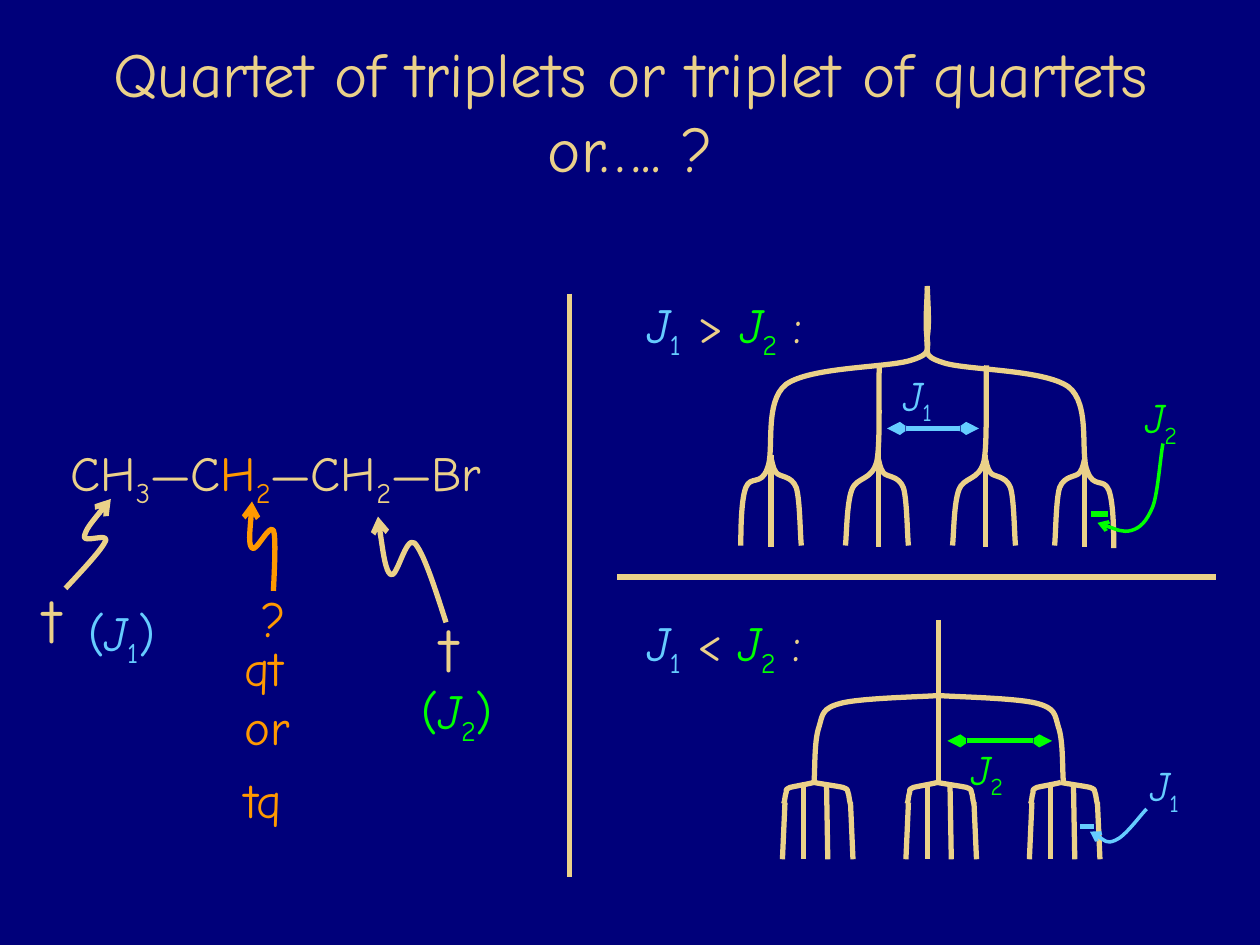
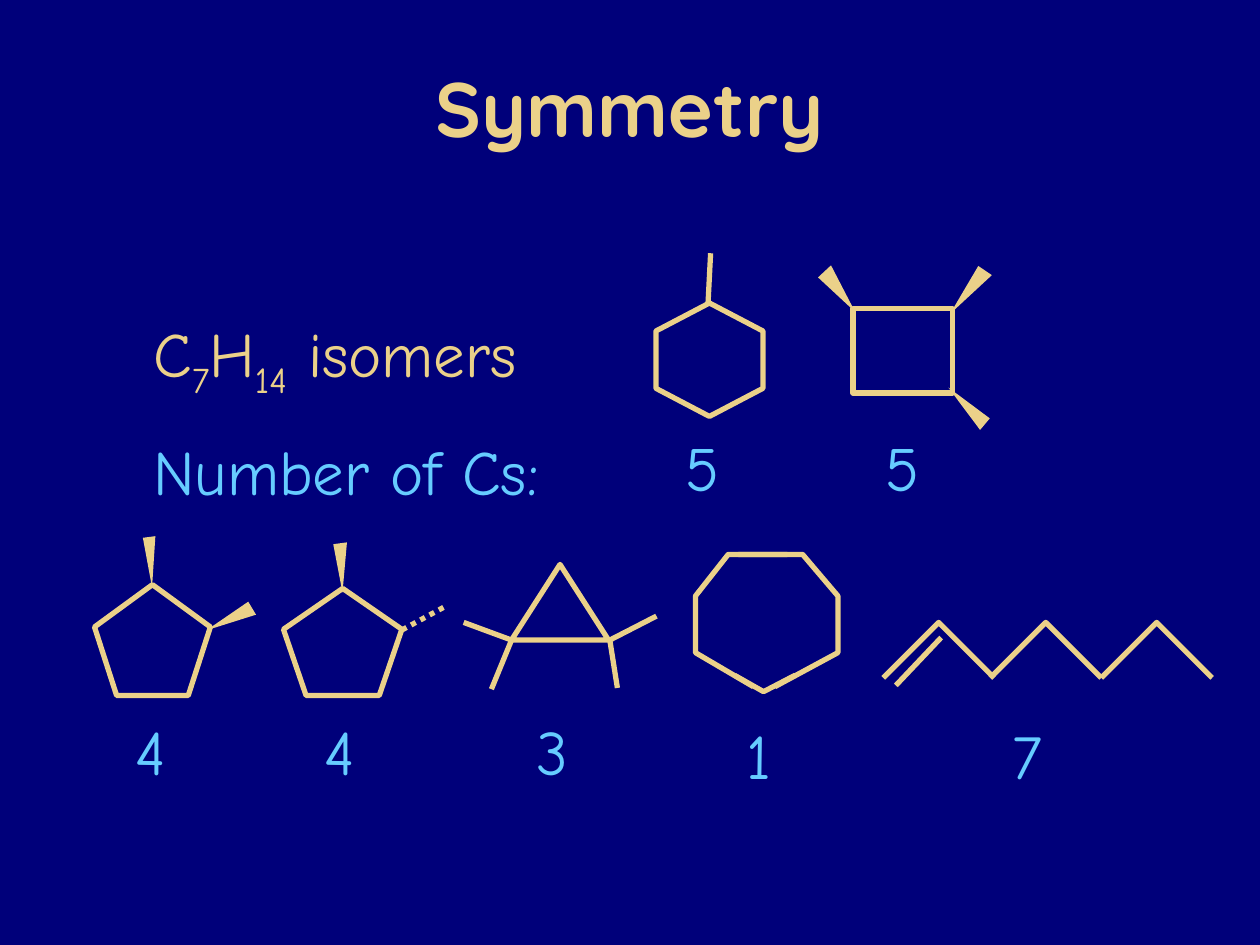
import lxml.etree
import pptx
import pptx.dml.color
import pptx.enum.dml
import pptx.enum.shapes
import pptx.enum.text
import pptx.oxml.ns
import pptx.util

PX = 9144  # EMU per px, 100 px to the inch
NAVY, SAND, ORANGE, SKY, GREEN = "00007A", "EBD189", "FF9900", "66CCFF", "00FF00"
BODY_FONT, HEADING_FONT = "Comic Neue", "Quicksand"
SHAPE = pptx.enum.shapes.MSO_SHAPE
ANCHOR = pptx.enum.text.MSO_ANCHOR
FIT = pptx.enum.text.MSO_AUTO_SIZE
qn = pptx.oxml.ns.qn


def rgb(color):
    return pptx.dml.color.RGBColor.from_string(color)


def emu(*lengths):
    return [v * PX for v in lengths]


def add_element(parent, tag, **attrs):
    return lxml.etree.SubElement(parent, qn(tag), attrs)


# ---- drawing ----

def style_line(sp, color, width=3, head=None, tail=None):
    """Head and tail give the arrow width, such as "med"."""
    sp.line.color.rgb = rgb(color)
    sp.line.width = pptx.util.Pt(width)
    ln = sp.line._get_or_add_ln()
    for tag, size in (("a:headEnd", head), ("a:tailEnd", tail)):
        if size:
            add_element(ln, tag, type="arrow", w=size, len="med")


def line(s, x1, y1, x2, y2, color=SAND, **style):
    c = s.shapes.add_connector(
        pptx.enum.shapes.MSO_CONNECTOR.STRAIGHT, *emu(x1, y1, x2, y2))
    style_line(c, color, **style)
    add_element(c._element.spPr, "a:effectLst")
    return c


def polyline(s, points, color=SAND, **style):
    builder = s.shapes.build_freeform(*points[0], scale=PX)
    builder.add_line_segments(points[1:], close=False)
    sp = builder.convert_to_shape()
    sp.shadow.inherit = False
    sp.fill.background()
    style_line(sp, color, **style)
    return sp


def curve(s, points, color=SAND, **style):
    """Cubic curve: a start point, then two handles and an end per piece."""
    sp = polyline(s, points, color, **style)
    steps = list(sp._element.iter(qn("a:lnTo")))
    for i in range(0, len(steps), 3):
        bend = add_element(steps[i].getparent(), "a:cubicBezTo")
        for step in steps[i:i + 3]:
            bend.append(step[0])
            step.getparent().remove(step)


def place(points, x, y, side=1):
    """Move points to x, y; side -1 mirrors them left to right."""
    return [(x + side * dx, y + dy) for dx, dy in points]


def outline(s, kind, x, y, w, h, rotation=0):
    sp = s.shapes.add_shape(kind, *emu(x, y, w, h))
    sp.shadow.inherit = False
    sp.rotation = rotation
    sp.fill.background()
    style_line(sp, SAND)
    return sp


def wedge(s, x, y, w, h, rotation):
    sp = outline(s, SHAPE.ISOSCELES_TRIANGLE, x, y, w, h, rotation)
    sp.adjustments[0] = 0.8
    sp.fill.solid()
    sp.fill.fore_color.rgb = rgb(SAND)
    sp.line.fill.background()


# ---- text ----

def add_run(p, text, color, size, mark="", font=BODY_FONT, bold=False):
    r = p.add_run()
    r.text = text
    r.font.name = font
    r.font.size = pptx.util.Pt(size)
    r.font.bold = bold
    r.font.italic = mark == "italic"
    r.font.color.rgb = rgb(color)
    if mark == "sub":
        r._r.get_or_add_rPr().set("baseline", "-25000")


def label(s, x, y, w, h, *paragraphs, size=28):
    """Each paragraph is a list of (text, colour[, mark]) runs."""
    tf = s.shapes.add_textbox(*emu(x, y, w, h)).text_frame
    tf.word_wrap = True
    tf.auto_size = FIT.SHAPE_TO_FIT_TEXT
    for i, runs in enumerate(paragraphs):
        p = tf.paragraphs[0]
        if i:
            p = tf.add_paragraph()
            p.space_before = pptx.util.Pt(18)
        for text, color, *mark in runs:
            add_run(p, text, color, size, *mark)
    return tf


def coupling(n):
    """Runs for the coupling constant J with its number."""
    color = {1: SKY, 2: GREEN}[n]
    return [("J", color, "italic"), (str(n), color, "sub")]


def in_brackets(n):
    color = coupling(n)[0][1]
    return [("(", color), *coupling(n), (")", color)]


def title(s, text, x, y, w, h, size, anchor, font=BODY_FONT, bold=False):
    sp = s.shapes.title
    sp.left, sp.top, sp.width, sp.height = emu(x, y, w, h)
    tf = sp.text_frame
    tf.word_wrap = True
    tf.auto_size = FIT.NONE
    tf.vertical_anchor = anchor
    p = tf.paragraphs[0]
    p.alignment = pptx.enum.text.PP_ALIGN.CENTER
    add_run(p, text, SAND, size, font=font, bold=bold)


# ---- slide 1 ----

def molecule(s, x, y):
    label(s, x, y, 379, 57, [
        ("CH", SAND), ("3", SAND, "sub"), ("—C", SAND), ("H", ORANGE),
        ("2", ORANGE, "sub"), ("—CH", SAND), ("2", SAND, "sub"), ("—Br", SAND)])
    squiggles = [
        (SAND, [(42, 50), (32, 62), (22, 74), (21, 80), (20, 85), (40, 77),
                (38, 83), (35, 90), (21, 105), (6, 121)]),
        (ORANGE, [(154, 52), (153, 69), (151, 86), (154, 89), (157, 93), (168, 69),
                  (171, 75), (173, 80), (172, 102), (171, 123)]),
        (SAND, [(254, 64), (257, 86), (260, 107), (264, 110), (269, 114), (276, 79),
                (283, 85), (290, 92), (299, 120), (308, 148)])]
    for color, points in squiggles:
        curve(s, place(points, x, y), color, head="med")
    for dx, dy in ((-21, 110), (294, 133)):
        label(s, x + dx, y + dy, 67, 70, [("t", SAND)], size=36)
    label(s, x + 14, y + 127, 115, 57, in_brackets(1))
    label(s, x + 279, y + 189, 115, 57, in_brackets(2))
    label(s, x + 152, y + 116, 40, 57, [("?", ORANGE)])
    tf = label(s, x + 138, y + 155, 81, 164, [("qt or tq", ORANGE)])
    add_run(tf.paragraphs[0], " ", ORANGE, 36)


def quartet_of_triplets(s, x, y):
    """Tree whose trunk starts at x, y."""
    branch = [(0, 0), (0, 7), (-2, 30), (0, 40), (2, 50), (-6, 53), (13, 59),
              (32, 65), (92, 64), (112, 78), (130, 92), (121, 132), (127, 145),
              (132, 159), (140, 150), (144, 160), (148, 170), (148, 197), (148, 206)]
    leg = [(0, 136), (1, 138), (1, 143), (4, 147), (7, 151), (16, 149), (20, 159),
           (23, 169), (23, 196), (24, 205)]
    stem = [(1, 62), (0, 75), (2, 122), (-1, 138), (-5, 154), (-17, 150), (-21, 161),
            (-25, 172), (-25, 196), (-26, 205)]
    for side in (-1, 1):
        curve(s, place(branch, x - 1, y + side, side))
    for dx, top, leg_side in ((-125, 133, 1), (-40, 125, 1), (45, 133, 1),
                              (124, 145, -1)):
        line(s, x + dx, y + top, x + dx, y + 206)
        curve(s, place(leg, x + dx, y, leg_side))
        if abs(dx) < 100:
            curve(s, place(stem, x + dx, y))


def triplet_of_quartets(s, x, y):
    """Tree whose trunk starts at x, y."""
    branch = [(0, 60), (13, 61), (61, 62), (77, 66), (93, 70), (92, 75), (95, 85),
              (99, 96), (98, 120), (99, 129)]
    shoulders = [
        [(0, 129), (-3, 130), (-15, 132), (-19, 133), (-23, 135), (-22, 135),
         (-22, 137), (-23, 139), (-23, 144), (-24, 146)],
        [(0, 129), (4, 130), (19, 132), (23, 133), (28, 135), (26, 135),
         (27, 137), (28, 139), (28, 144), (29, 146)]]
    line(s, x, y, x, y + 131)
    for side in (-1, 1):
        curve(s, place(branch, x, y, side))
    for fork in (x - 99 + 98 * i for i in range(3)):
        for shoulder in shoulders:
            curve(s, place(shoulder, fork, y))
        for start, top, end in ((-23, 145, -25), (-8, 132, -8), (10, 131, 11),
                                (29, 145, 31)):
            line(s, fork + start, y + top, fork + end, y + 190)


def splitting_case(s, x, y, sign):
    label(s, x, y, 179, 57,
          [*coupling(1), (f" {sign} ", SAND), *coupling(2), (" :", SAND)])


def spacing_marks(s, wide, narrow, hook, labels, numbers):
    """Wide two-headed arrow, short bar with a hooked pointer, and two J labels."""
    wide_color, narrow_color = (coupling(n)[0][1] for n in numbers)
    for (x, y, w), color, head in ((wide, wide_color, "sm"),
                                   (narrow, narrow_color, None)):
        line(s, x, y, x + w, y, color, head=head, tail=head)
    curve(s, hook, narrow_color, width=2, head="med")
    for (x, y), n in zip(labels, numbers):
        label(s, x, y, 61, 50, coupling(n), size=24)


def splitting_slide(s):
    title(s, "Quartet of triplets or triplet of quartets or….. ?",
          34, 22, 933, 130, 36, ANCHOR.TOP)
    molecule(s, 46, 346)
    line(s, 452, 233, 452, 696)
    line(s, 490, 458, 965, 458)

    splitting_case(s, 504, 229, ">")
    quartet_of_triplets(s, 737, 228)
    spacing_marks(s, (704, 340, 73), (866, 408, 13),
                  [(871, 415), (875, 416), (891, 423), (898, 421), (905, 419),
                   (910, 414), (915, 402), (919, 391), (921, 362), (923, 352)],
                  [(707, 288), (899, 306)], (1, 2))

    splitting_case(s, 504, 481, "<")
    triplet_of_quartets(s, 745, 492)
    spacing_marks(s, (752, 588, 83), (857, 656, 11),
                  [(865, 660), (868, 661), (878, 670), (885, 667), (893, 664),
                   (905, 647), (910, 642)],
                  [(761, 585), (903, 598)], (2, 1))


# ---- slide 2 ----

def carbon_count(s, x, y, n):
    label(s, x, y, 56, 70, [(n, SKY)], size=36)


def methylcyclohexane(s, x, y):
    sp = outline(s, SHAPE.HEXAGON, x, y, 90, 85, 90)
    sp.adjustments[0] = 0.262
    line(s, x + 44, y - 3, x + 46, y - 42)
    carbon_count(s, x + 16, y + 92, "5")


def trimethylcyclobutane(s, x, y):
    outline(s, SHAPE.RECTANGLE, x, y, 79, 67)
    wedge(s, x - 16, y - 35, 14, 40, 137)
    wedge(s, x + 86, y - 34, 13, 44, 213.9)
    wedge(s, x + 83, y + 58, 12, 41, 310)
    carbon_count(s, x + 16, y + 90, "5")


def cis_dimethylcyclopentane(s, x, y):
    outline(s, SHAPE.REGULAR_PENTAGON, x, y, 92, 88)
    wedge(s, x + 41, y - 38, 10, 40, 172.4)
    wedge(s, x + 102, y + 9, 12, 40, 239)
    carbon_count(s, x + 23, y + 97, "4")


def trans_dimethylcyclopentane(s, x, y):
    outline(s, SHAPE.REGULAR_PENTAGON, x, y, 94, 85)
    wedge(s, x + 42, y - 36, 11, 39, 172.4)
    c = line(s, x + 94, y + 33, x + 129, y + 14)
    c.line.dash_style = pptx.enum.dml.MSO_LINE.ROUND_DOT
    carbon_count(s, x + 23, y + 94, "4")


def tetramethylcyclopropane(s, x, y):
    outline(s, SHAPE.ISOSCELES_TRIANGLE, x, y, 77, 60)
    for corner, ends in ((0, ((-38, 46), (-16, 99))), (78, ((115, 41), (84, 98)))):
        for dx, dy in ends:
            line(s, x + corner, y + 60, x + dx, y + dy)
    carbon_count(s, x + 10, y + 113, "3")


def cycloheptane(s, x, y):
    right = [(34, 0), (85, 0), (113, 33), (113, 78), (63, 105)]
    left = [(73, 0), (26, 0), (0, 33), (0, 78), (46, 105)]
    bottom = [(79, 96), (54, 109), (31, 96)]
    for part in (right, left, bottom):
        polyline(s, place(part, x, y))
    carbon_count(s, x + 31, y + 124, "1")


def heptene(s, x, y):
    for dx in (0, 85, 173):
        polyline(s, place([(0, 44), (44, 0), (88, 44)], x + dx, y))
    line(s, x + 46, y + 12, x + 10, y + 50)
    carbon_count(s, x + 93, y + 70, "7")


def symmetry_slide(s):
    title(s, "Symmetry", 75, 22, 850, 125, 44, ANCHOR.MIDDLE, HEADING_FONT, True)
    label(s, 112, 245, 373, 160,
          [("C", SAND), ("7", SAND, "sub"), ("H", SAND), ("14", SAND, "sub"),
           (" isomers", SAND)],
          [("Number of Cs:", SKY)], size=36)
    methylcyclohexane(s, 518, 243)
    trimethylcyclobutane(s, 677, 245)
    cis_dimethylcyclopentane(s, 75, 464)
    trans_dimethylcyclopentane(s, 225, 467)
    tetramethylcyclopropane(s, 406, 448)
    cycloheptane(s, 552, 440)
    heptene(s, 701, 494)


def main():
    prs = pptx.Presentation()
    prs.slide_width, prs.slide_height = emu(1000, 750)
    fill = prs.slide_master.background.fill
    fill.solid()
    fill.fore_color.rgb = rgb(NAVY)
    title_only = prs.slide_layouts[5]
    for build in (splitting_slide, symmetry_slide):
        build(prs.slides.add_slide(title_only))
    prs.save("out.pptx")


if __name__ == "__main__":
    main()
